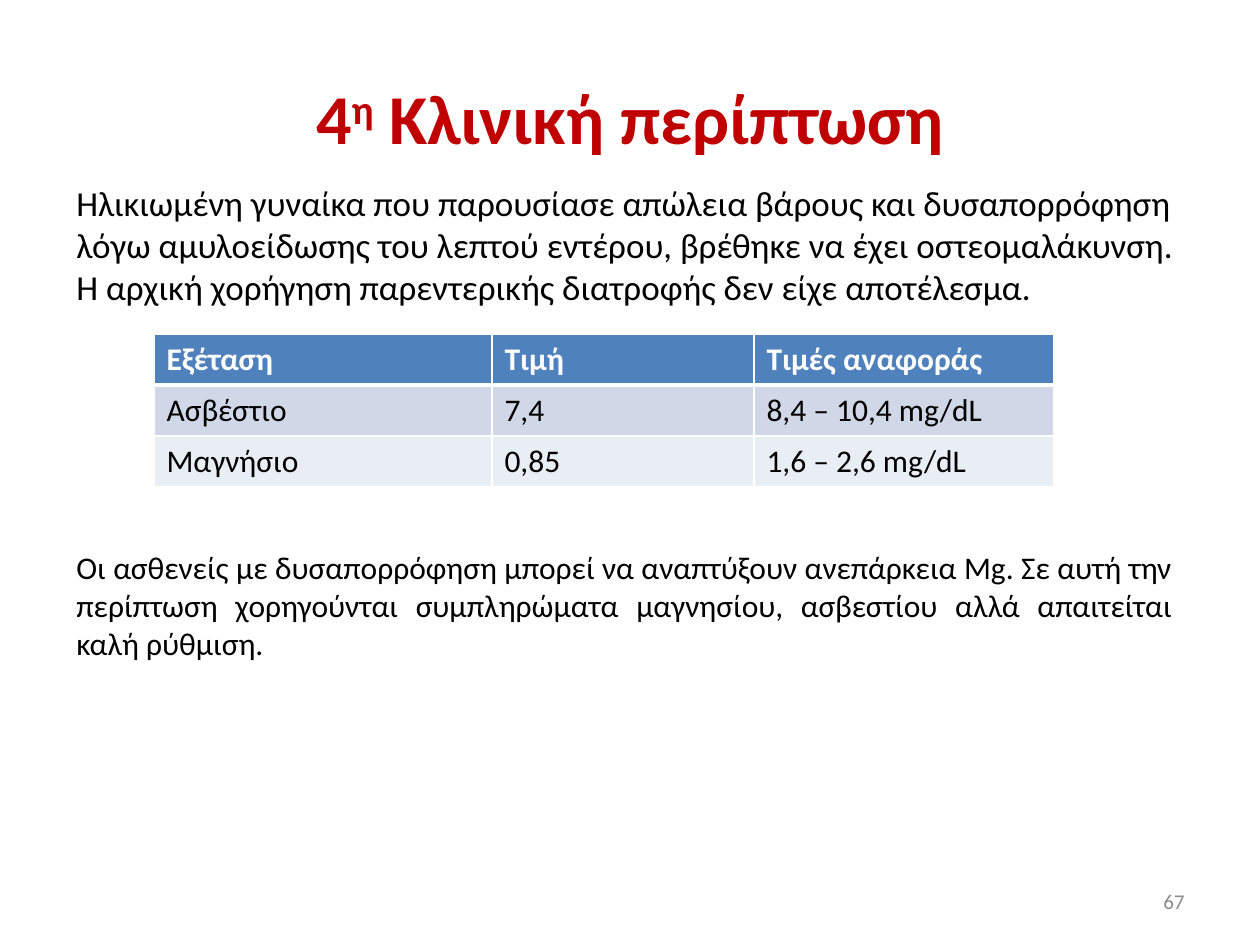
from lxml import etree
from pptx import Presentation
from pptx.dml.color import RGBColor
from pptx.enum.text import MSO_ANCHOR, PP_ALIGN
from pptx.oxml.ns import qn
from pptx.util import Pt

SCALE = 914400 / 126
LEFT, MID, RIGHT, JUST = (PP_ALIGN.LEFT, PP_ALIGN.CENTER,
                          PP_ALIGN.RIGHT, PP_ALIGN.JUSTIFY)
TOP, CENTER = MSO_ANCHOR.TOP, MSO_ANCHOR.MIDDLE

TITLE = {"size": Pt(40), "bold": True}
BODY = {"size": Pt(20)}
NOTE = {"size": Pt(18)}
HEAD = {"size": Pt(18), "bold": True}
SMALL = {"size": Pt(12)}

CASE = ("Ηλικιωμένη γυναίκα που παρουσίασε απώλεια βάρους και δυσαπορρόφηση "
        "λόγω αμυλοείδωσης του λεπτού εντέρου, βρέθηκε να έχει "
        "οστεομαλάκυνση. H αρχική χορήγηση παρεντερικής διατροφής δεν είχε "
        "αποτέλεσμα.")
ADVICE = ("Oι ασθενείς με δυσαπορρόφηση μπορεί να αναπτύξουν ανεπάρκεια Mg. "
          "Σε αυτή την περίπτωση χορηγούνται συμπληρώματα μαγνησίου, "
          "ασβεστίου αλλά απαιτείται καλή ρύθμιση.")
TESTS = [
    ("Εξέταση", "Τιμή", "Τιμές αναφοράς"),
    ("Ασβέστιο", "7,4", "8,4 – 10,4 mg/dL"),
    ("Μαγνήσιο", "0,85", "1,6 – 2,6 mg/dL"),
]
COLS = (338, 262, 300)
ROW = 51
FILLS = ("4F81BD", "D0D8E8", "E9EDF4")


def px(n):
    return round(n * SCALE)


def color(code):
    return RGBColor.from_string(code)


def add_run(para, text, style, code):
    run = para.add_run()
    run.text = text
    run.font.name = "Calibri"
    run.font.color.rgb = color(code)
    for key, value in style.items():
        setattr(run.font, key, value)
    return run


def add_text(slide, at, text, style, code="000000", align=LEFT, anchor=TOP):
    """Add a wrapped text box and return its paragraph."""
    frame = slide.shapes.add_textbox(*map(px, at)).text_frame
    frame.word_wrap = True
    frame.vertical_anchor = anchor
    para = frame.paragraphs[0]
    para.alignment = align
    add_run(para, text, style, code)
    return para


def set_edges(cell, widths):
    """Draw white cell borders, with widths in points by side."""
    props = cell._tc.get_or_add_tcPr()
    for side, width in widths.items():
        line = etree.SubElement(props, qn(f"a:ln{side}"), w=str(Pt(width)))
        fill = etree.SubElement(line, qn("a:solidFill"))
        etree.SubElement(fill, qn("a:srgbClr"), val="FFFFFF")


def add_tests(slide, left, top):
    size = (sum(COLS), ROW * len(TESTS))
    table = slide.shapes.add_table(
        len(TESTS), len(COLS), *map(px, (left, top, *size))).table
    for col, width in zip(table.columns, COLS):
        col.width = px(width)
    for r, row in enumerate(TESTS):
        table.rows[r].height = px(ROW)
        style, code = (NOTE, "000000") if r else (HEAD, "FFFFFF")
        edges = {"L": 1, "R": 1, "T": 3 if r == 1 else 1, "B": 1 if r else 3}
        for c, text in enumerate(row):
            cell = table.cell(r, c)
            set_edges(cell, edges)
            cell.fill.solid()
            cell.fill.fore_color.rgb = color(FILLS[r])
            add_run(cell.text_frame.paragraphs[0], text, style, code)


def main():
    deck = Presentation()
    deck.slide_width, deck.slide_height = px(1260), px(945)
    slide = deck.slides.add_slide(deck.slide_layouts[6])

    title = add_text(slide, (63, 38, 1134, 158), "4", TITLE, "C00000",
                     MID, CENTER)
    power = add_run(title, "η", TITLE, "C00000")
    power.font._element.set("baseline", "30000")
    add_run(title, " Κλινική περίπτωση", TITLE, "C00000")

    case = add_text(slide, (64, 175, 1134, 624), CASE, BODY)
    case.space_before = Pt(4)
    add_tests(slide, 154, 334)
    add_text(slide, (64, 542, 1121, 127), ADVICE, NOTE, align=JUST)
    add_text(slide, (903, 876, 294, 50), "67", SMALL, "8C8C8C", RIGHT, CENTER)
    deck.save("out.pptx")


if __name__ == "__main__":
    main()
